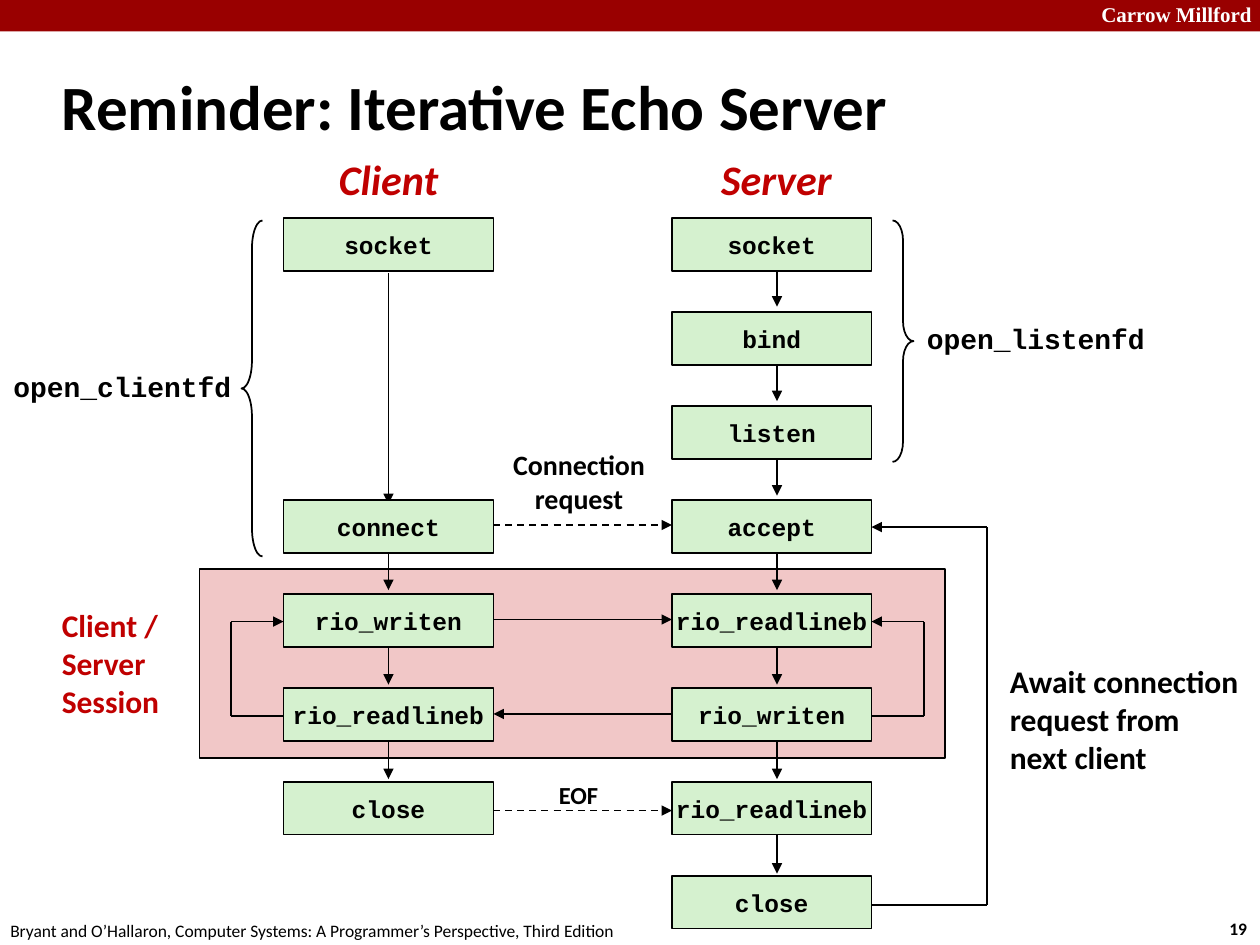
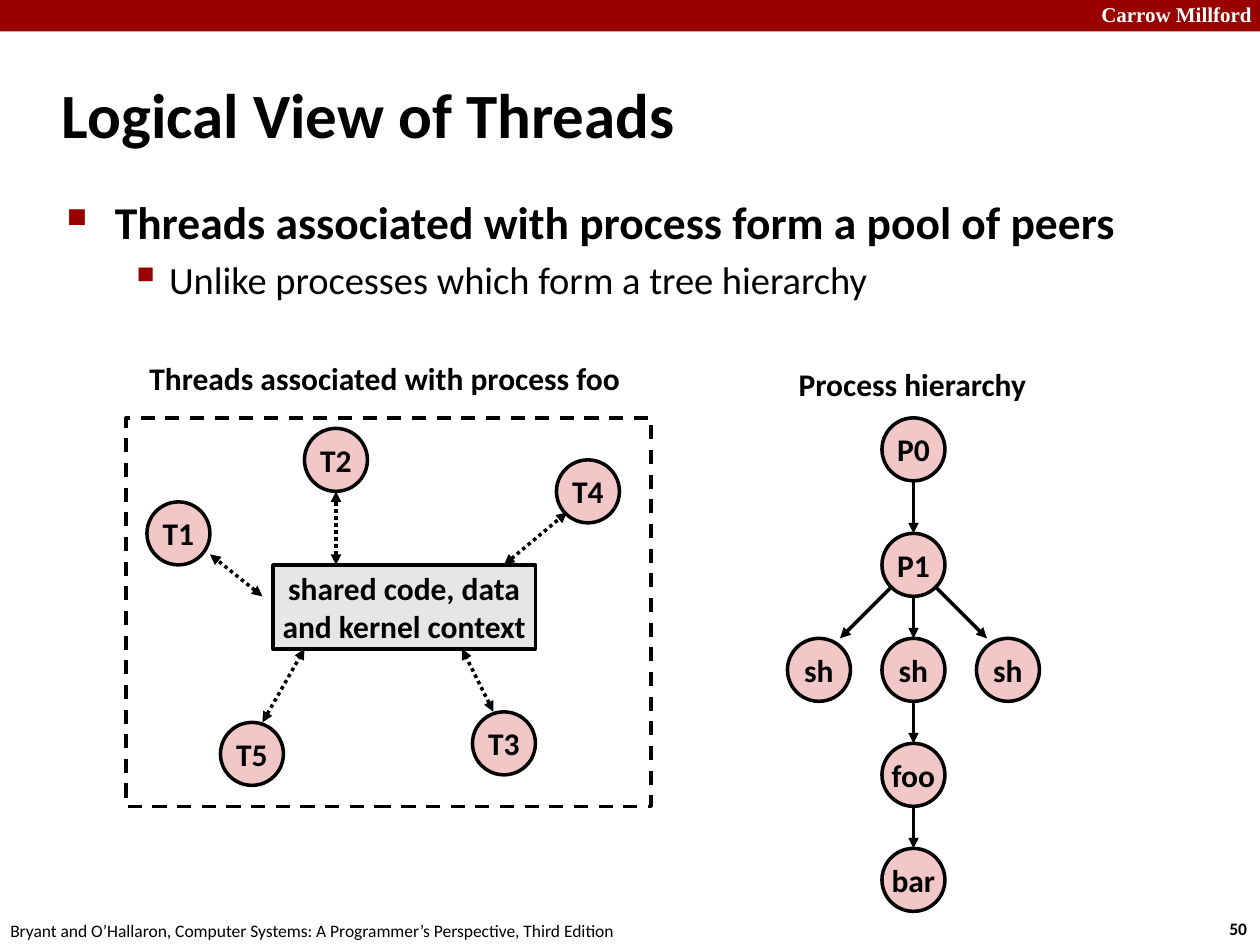
from lxml.etree import SubElement
from pptx import Presentation
from pptx.dml.color import RGBColor
from pptx.enum.dml import MSO_LINE as Dash
from pptx.enum.shapes import MSO_CONNECTOR, MSO_SHAPE as Shape
from pptx.enum.text import MSO_ANCHOR as Anchor, PP_ALIGN as Align
from pptx.oxml.ns import qn
from pptx.util import Inches, Pt

# Grid: 120 columns by 90 rows on a 10 x 7.5 inch slide
CELLS_PER_INCH = 12
COLUMNS, ROWS = 120, 90

# Shared look
BLACK, WHITE = "000000", "FFFFFF"
CRIMSON, RED = "990000", "C00000"
GREEN, PINK, GREY = "D5F1CF", "F1C7C7", "E6E6E6"
SANS, MONO, SERIF = "Calibri", "Courier New", "Times New Roman"
SCHOOL = "Carrow Millford"
BOOK = ("Bryant and O’Hallaron, Computer Systems: "
        "A Programmer’s Perspective, Third Edition")

# Flow chart of the first slide: one box per call, two lanes
CLIENT_LEFT, CLIENT_WIDTH, CLIENT_AXIS = 27, 20, 37
SERVER_LEFT, SERVER_WIDTH, SERVER_AXIS = 64, 19, 74
CLIENT_RIGHT = CLIENT_LEFT + CLIENT_WIDTH
SERVER_RIGHT = SERVER_LEFT + SERVER_WIDTH
CALL_TOP, CALL_STEP, CALL_HEIGHT = 20.8, 8.95, 5
CLIENT_CALLS = {0: "socket", 3: "connect", 4: "rio_writen",
                5: "rio_readlineb", 6: "close"}
SERVER_CALLS = dict(enumerate(["socket", "bind", "listen", "accept",
                               "rio_readlineb", "rio_writen",
                               "rio_readlineb", "close"]))

# Circles of the second slide
CIRCLE = 6
THREADS = {"T1": (14, 47.8), "T2": (29, 40.8), "T4": (53, 43.8),
           "T5": (21, 68.8), "T3": (45, 67.8)}
THREAD_LINKS = [(25, 68.8, 29, 61.8), (47, 67.8, 44, 61.8),
                (25, 56.8, 20, 52.8), (32, 53.8, 32, 46.8),
                (48, 53.8, 54, 48.8)]
PROCESS_CHAIN = {"P0": 39.8, "P1": 50.8, "sh": 60.8, "foo": 70.8, "bar": 80.8}
CHAIN_LEFT, SIBLING_OFFSET = 84, 9


def cells(*values):
    return [Inches(value / CELLS_PER_INCH) for value in values]


def colour(hex_string):
    return RGBColor.from_string(hex_string)


def style_line(line, width, dash=None):
    line.color.rgb = colour(BLACK)
    line.width = Pt(width)
    if dash is not None:
        line.dash_style = dash


def write(frame, text, size, font=SANS, ink=BLACK, bold=True, italic=False,
          align=Align.LEFT, anchor=Anchor.MIDDLE, wrap=False):
    frame.text = text
    frame.word_wrap = wrap
    frame.vertical_anchor = anchor
    for para in frame.paragraphs:
        para.alignment = align
        for span in para.runs:
            span.font.name = font
            span.font.size = Pt(size)
            span.font.bold = bold
            span.font.italic = italic
            span.font.color.rgb = colour(ink)


def add_text(page, area, text, size, **style):
    box = page.shapes.add_textbox(*cells(*area))
    write(box.text_frame, text, size, **style)
    return box


def add_box(page, area, kind=Shape.RECTANGLE, fill=None, line_width=None,
            dash=None):
    box = page.shapes.add_shape(kind, *cells(*area))
    box.shadow.inherit = False
    if fill:
        box.fill.solid()
        box.fill.fore_color.rgb = colour(fill)
    else:
        box.fill.background()
    if line_width:
        style_line(box.line, line_width, dash)
    else:
        box.line.fill.background()
    return box


def add_line(page, ends, width=1, dash=None, arrows=("tailEnd",)):
    line = page.shapes.add_connector(MSO_CONNECTOR.STRAIGHT, *cells(*ends))
    style_line(line.line, width, dash)
    outline = line.line._get_or_add_ln()
    for arrow in arrows:
        SubElement(outline, qn(f"a:{arrow}"), type="triangle")
    SubElement(line._element.spPr, qn("a:effectLst"))


def add_loop(page, start_x, outer_x, start_y, end_y):
    """Leave a box sideways, run up and come back with an arrow."""
    add_line(page, (start_x, start_y, outer_x, start_y), arrows=())
    add_line(page, (outer_x, start_y, outer_x, end_y), arrows=())
    add_line(page, (outer_x, end_y, start_x, end_y))


def add_brace(page, kind, area, curve):
    brace = add_box(page, area, kind, line_width=1)
    brace.adjustments[0] = curve


def add_calls(page, left, width, calls):
    for row, name in calls.items():
        area = (left, CALL_TOP + row * CALL_STEP, width, CALL_HEIGHT)
        box = add_box(page, area, fill=GREEN, line_width=1)
        write(box.text_frame, name, 14, font=MONO, align=Align.CENTER)


def add_circle(page, left, top, name):
    circle = add_box(page, (left, top, CIRCLE, CIRCLE), Shape.OVAL, PINK, 2)
    write(circle.text_frame, name, 18, align=Align.CENTER)


def add_bullet(para, mark, percent, left, hanging):
    """Hanging bullet; left and hanging are in inches."""
    para.space_before = Pt(para.runs[0].font.size.pt * 0.2)
    props = para._p.get_or_add_pPr()
    props.set("marL", str(Inches(left)))
    props.set("indent", str(-Inches(hanging)))
    tint = SubElement(props, qn("a:buClr"))
    SubElement(tint, qn("a:srgbClr"), val=CRIMSON)
    SubElement(props, qn("a:buSzPct"), val=str(percent * 1000))
    SubElement(props, qn("a:buChar"), char=mark)


def add_page(deck, title, title_top, number):
    page = deck.slides.add_slide(deck.slide_layouts[6])
    add_box(page, (0, 0, COLUMNS, 3), fill=CRIMSON)
    add_text(page, (103.7, -0.4, 17.2, 3.6), SCHOOL, 12, font=SERIF,
             ink=WHITE, anchor=Anchor.TOP)
    add_text(page, (115.9, 86.8, 4.4, 3.2), str(number), 10, anchor=Anchor.TOP)
    add_text(page, (-0.2, 87, 61, 3.2), BOOK, 10, bold=False,
             anchor=Anchor.TOP)
    add_text(page, (4.7, title_top, 99.6, 10), title, 36, wrap=True)
    return page


def build_echo_server(deck):
    page = add_page(deck, "Reminder: Iterative Echo Server", 5, 19)

    # Session band with its two read and write loops
    add_box(page, (19, 54.2, 71, 18), fill=PINK, line_width=1)
    add_loop(page, SERVER_RIGHT, 88, 68.2, 59.2)
    add_loop(page, CLIENT_LEFT, 22, 68.2, 59.2)
    add_loop(page, SERVER_RIGHT, 94, 86.2, 50.2)

    # Arrows down each lane
    add_line(page, (CLIENT_AXIS, 26, CLIENT_AXIS, 48))
    lanes = [(CLIENT_AXIS, range(3, 6)), (SERVER_AXIS, range(7))]
    for axis, rows in lanes:
        for row in rows:
            start = 25.2 + 9 * row
            add_line(page, (axis, start, axis, start + 4))

    # Messages between the lanes
    add_line(page, (CLIENT_RIGHT, 59, SERVER_LEFT, 59))
    add_line(page, (SERVER_LEFT, 68, CLIENT_RIGHT, 68))
    for y in (50, 77.2):
        add_line(page, (40, y, SERVER_LEFT, y), dash=Dash.DASH)

    add_calls(page, CLIENT_LEFT, CLIENT_WIDTH, CLIENT_CALLS)
    add_calls(page, SERVER_LEFT, SERVER_WIDTH, SERVER_CALLS)

    # Helper functions spanned by braces
    add_brace(page, Shape.RIGHT_BRACE, (85, 21, 2, 23), 0.96)
    add_brace(page, Shape.LEFT_BRACE, (23, 21, 2, 32), 1.33)
    for area, name in [((87, 30, 23.3, 4.4), "open_listenfd"),
                       ((0, 34.6, 23.3, 4.4), "open_clientfd")]:
        add_text(page, area, name, 16, font=MONO, align=Align.CENTER)

    # Lane headings and remarks
    for area, name in [((31, 14, 12, 6), "Client"),
                       ((67.4, 14, 13.1, 6), "Server")]:
        add_text(page, area, name, 24, ink=RED, italic=True,
                 align=Align.CENTER)
    add_text(page, (47.6, 42, 15.1, 7.7), "Connection\nrequest", 16,
             align=Align.CENTER)
    add_text(page, (52, 73.6, 6.2, 4.1), "EOF", 14, align=Align.CENTER)
    add_text(page, (4.7, 57.1, 12.4, 12.1), "Client / Server\nSession", 18,
             ink=RED, wrap=True)
    add_text(page, (95, 62.4, 24.4, 12.1),
             "Await connection\nrequest from\nnext client", 18)


def build_thread_view(deck):
    page = add_page(deck, "Logical View of Threads", 5.8, 50)

    # Statement with one sub-point
    body = add_text(page, (5.2, 17.9, 103.7, 65.3),
                    "Threads associated with process form a pool of peers\n"
                    "Unlike processes which form a tree hierarchy",
                    26, anchor=Anchor.TOP, wrap=True)
    statement, detail = body.text_frame.paragraphs
    detail.runs[0].font.size = Pt(22)
    detail.runs[0].font.bold = False
    add_bullet(statement, "■", 60, 0.38, 0.38)
    add_bullet(detail, "▪", 110, 0.81, 0.31)

    # Pool of peer threads around their shared context
    add_text(page, (12.7, 33.6, 47.9, 4.8),
             "Threads associated with process foo", 18, align=Align.CENTER)
    add_box(page, (12, 39.8, 50, 37), line_width=2, dash=Dash.DASH)
    for name, (left, top) in THREADS.items():
        add_circle(page, left, top, name)
    context = add_box(page, (26, 53.8, 25, 8), fill=GREY, line_width=2)
    write(context.text_frame, "shared code, data\nand kernel context", 18,
          align=Align.CENTER)
    for ends in THREAD_LINKS:
        add_line(page, ends, 2, Dash.ROUND_DOT, ("headEnd", "tailEnd"))

    # Process tree: a chain, with a sibling on each side of "sh"
    add_text(page, (74.6, 34.2, 24.6, 4.8), "Process hierarchy", 18,
             align=Align.CENTER)
    for name, top in PROCESS_CHAIN.items():
        add_circle(page, CHAIN_LEFT, top, name)
    axis = CHAIN_LEFT + CIRCLE / 2
    tops = list(PROCESS_CHAIN.values())
    for upper, lower in zip(tops, tops[1:]):
        add_line(page, (axis, upper + CIRCLE, axis, lower), 2)
    for side in (-1, 1):
        sibling_top = PROCESS_CHAIN["sh"]
        add_circle(page, CHAIN_LEFT + side * SIBLING_OFFSET, sibling_top, "sh")
        add_line(page, (axis + side * 2, sibling_top - 5,
                        axis + side * 7, sibling_top), 2)


def main():
    deck = Presentation()
    deck.slide_width, deck.slide_height = cells(COLUMNS, ROWS)
    build_echo_server(deck)
    build_thread_view(deck)
    deck.save("out.pptx")


if __name__ == "__main__":
    main()
